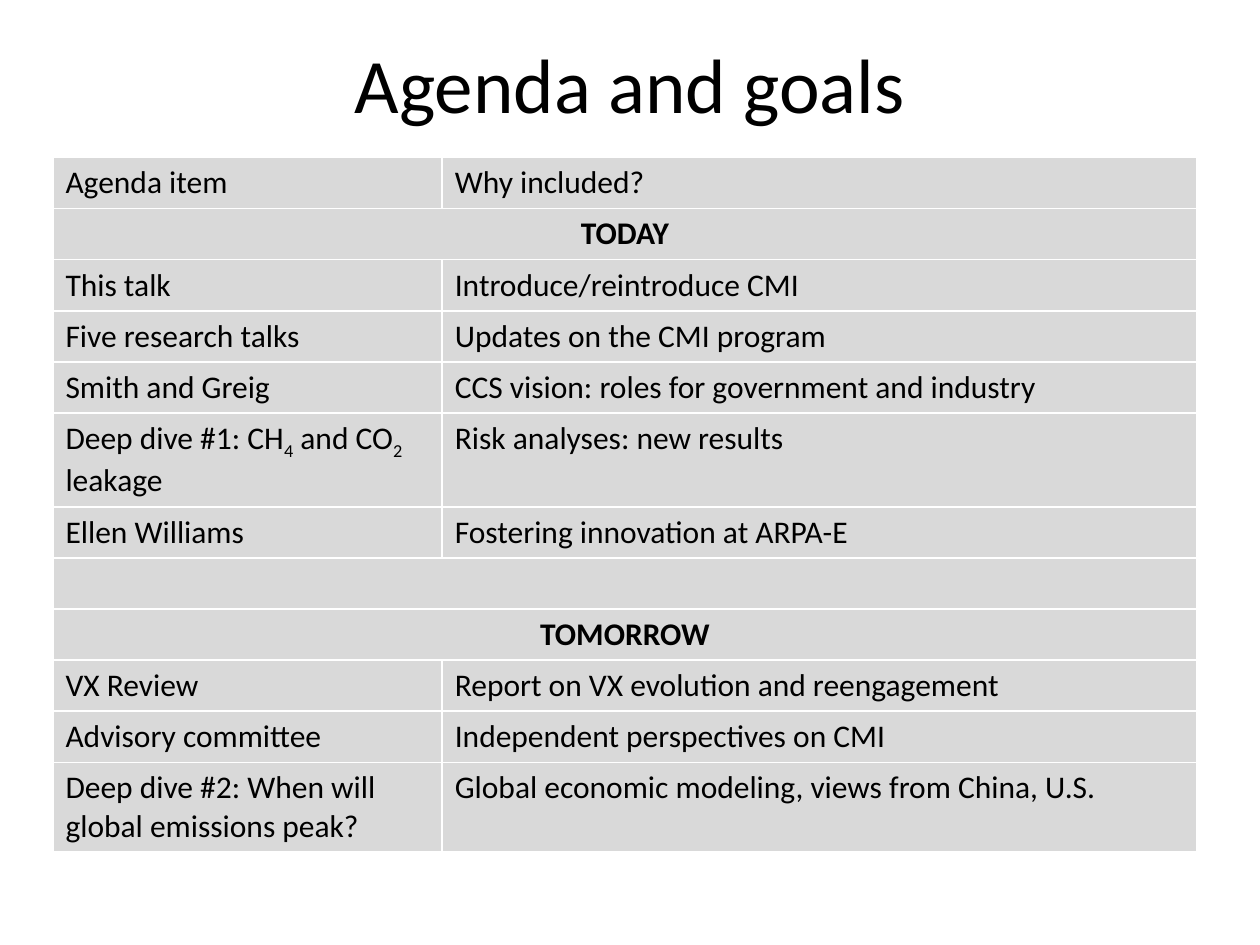
from lxml import etree
from pptx import Presentation
from pptx import util as u
from pptx.dml.color import RGBColor
from pptx.enum import text
from pptx.oxml import ns

AGENDA = [
    ("Agenda item", "Why included?"),
    ("TODAY",),
    ("This talk", "Introduce/reintroduce CMI"),
    ("Five research talks", "Updates on the CMI program"),
    ("Smith and Greig", "CCS vision: roles for government and industry"),
    ("Deep dive #1: CH_4_ and CO_2 _leakage", "Risk analyses: new results"),
    ("Ellen Williams", "Fostering innovation at ARPA-E"),
    ("",),
    ("TOMORROW",),
    ("VX Review", "Report on VX evolution and reengagement"),
    ("Advisory committee", "Independent perspectives on CMI"),
    ("Deep dive #2: When will global emissions peak?",
     "Global economic modeling, views from China, U.S."),
]
ROW_HEIGHT = 0.4
WRAPPED_HEIGHTS = {5: 0.74, 11: 0.7}


def color(value):
    return RGBColor.from_string(value)


def write(frame, content, size=18, font="Calibri", fill="000000", bold=False,
          align=text.PP_ALIGN.LEFT):
    """Fill a text frame; parts between underscores become subscripts."""
    paragraph = frame.paragraphs[0]
    paragraph.alignment = align
    paragraph.font.size = u.Pt(size)
    for index, part in enumerate(content.split("_")):
        if not part:
            continue
        run = paragraph.add_run()
        run.text = part
        run.font.name, run.font.size, run.font.bold = font, u.Pt(size), bold
        run.font.color.rgb = color(fill)
        if index % 2:
            run.font._element.set("baseline", "-25000")


class SlideBuilder:
    cell_fill = "D9D9D9"
    border = "FFFFFF"
    border_width = 1

    def __init__(self, presentation):
        self.slide = presentation.slides.add_slide(presentation.slide_layouts[5])

    def title(self, content, left, top, width, height):
        shape = self.slide.shapes.title
        shape.left, shape.top = u.Inches(left), u.Inches(top)
        shape.width, shape.height = u.Inches(width), u.Inches(height)
        shape.text_frame.vertical_anchor = text.MSO_ANCHOR.MIDDLE
        write(shape.text_frame, content, size=44, align=text.PP_ALIGN.CENTER)

    def table(self, rows, left, top, widths, heights):
        table = self.slide.shapes.add_table(
            len(rows), len(widths), u.Inches(left), u.Inches(top),
            u.Inches(sum(widths)), u.Inches(sum(heights))).table
        table.first_row = table.horz_banding = False
        for column, width in zip(table.columns, widths):
            column.width = u.Inches(width)
        for index, (row, height) in enumerate(zip(rows, heights)):
            table.rows[index].height = u.Inches(height)
            for cell in table.rows[index].cells:
                self.style_cell(cell)
            # A single entry is a heading across the whole row
            heading = len(row) == 1
            if heading:
                table.cell(index, 0).merge(table.cell(index, len(widths) - 1))
            align = text.PP_ALIGN.CENTER if heading else text.PP_ALIGN.LEFT
            for column, content in enumerate(row):
                write(table.cell(index, column).text_frame, content,
                      bold=heading, align=align)

    def style_cell(self, cell):
        properties = cell._tc.get_or_add_tcPr()
        for side in ("L", "R", "T", "B"):
            line = etree.SubElement(properties, ns.qn("a:ln" + side),
                                    w=str(u.Pt(self.border_width)))
            fill = etree.SubElement(line, ns.qn("a:solidFill"))
            etree.SubElement(fill, ns.qn("a:srgbClr"), val=self.border)
        cell.fill.solid()
        cell.fill.fore_color.rgb = color(self.cell_fill)


def main():
    presentation = Presentation()
    presentation.slide_width, presentation.slide_height = u.Inches(10), u.Inches(7.5)
    builder = SlideBuilder(presentation)

    # Title
    builder.title("Agenda and goals", 0.5, 0.17, 9, 0.97)

    # Agenda table
    heights = [WRAPPED_HEIGHTS.get(index, ROW_HEIGHT) for index in range(len(AGENDA))]
    builder.table(AGENDA, 0.42, 1.25, [3.09, 5.99], heights)

    presentation.save("out.pptx")


if __name__ == "__main__":
    main()
